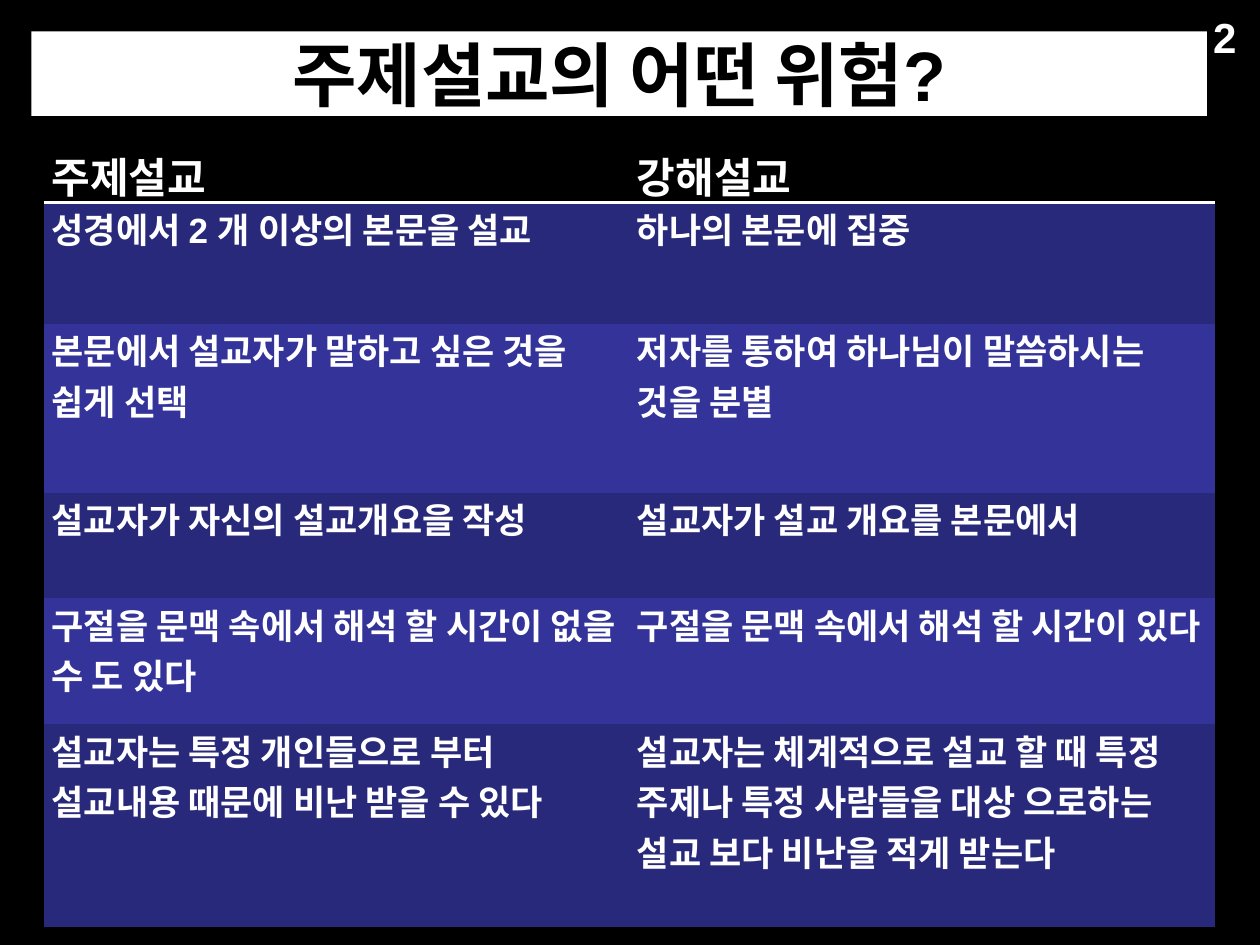
import pptx
import pptx.util
import pptx.dml.color
import pptx.enum.shapes
import pptx.enum.text
import pptx.oxml
import pptx.oxml.ns
from pptx.util import Inches

BLACK, WHITE, NAVY, INDIGO = "000000", "FFFFFF", "29297B", "333399"


def color(hex_string):
    return pptx.dml.color.RGBColor.from_string(hex_string)


def style_text(paragraph, size, hex_string, name="Arial"):
    font = paragraph.font
    font.name, font.size, font.bold = name, pptx.util.Pt(size), True
    font.color.rgb = color(hex_string)


presentation = pptx.Presentation()
presentation.slide_width = Inches(10)
presentation.slide_height = Inches(7.5)
slide = presentation.slides.add_slide(presentation.slide_layouts[6])
slide.background.fill.solid()
slide.background.fill.fore_color.rgb = color(BLACK)

# Title bar
title = slide.shapes.add_shape(
    pptx.enum.shapes.MSO_SHAPE.RECTANGLE,
    Inches(0.25), Inches(0.25), Inches(9.33), Inches(0.67))
title.shadow.inherit = False
title.fill.solid()
title.fill.fore_color.rgb = color(WHITE)
title.line.fill.background()
title.text_frame.vertical_anchor = pptx.enum.text.MSO_ANCHOR.MIDDLE
title.text_frame.text = "주제설교의 어떤 위험?"
paragraph = title.text_frame.paragraphs[0]
paragraph.alignment = pptx.enum.text.PP_ALIGN.CENTER
style_text(paragraph, 40, BLACK)

# Page number
number = slide.shapes.add_textbox(Inches(9.53), Inches(0.04), Inches(0.39), Inches(0.5))
number.text_frame.word_wrap = False
number.text_frame.text = "2"
style_text(number.text_frame.paragraphs[0], 24, WHITE)

# Comparison table: height in inches, font, topical preaching, expository preaching
rows = [
    (0.46, "Arial", "주제설교", "강해설교"),
    (0.96, "Arial", "성경에서 2 개 이상의 본문을 설교", "하나의 본문에 집중"),
    (1.34, "Arial", "본문에서 설교자가 말하고 싶은 것을 쉽게 선택",
     "저자를 통하여 하나님이 말씀하시는 것을 분별"),
    (0.84, "Arial", "설교자가 자신의 설교개요을 작성", "설교자가 설교 개요를 본문에서"),
    (1.00, "Roboto", "구절을 문맥 속에서 해석 할 시간이 없을 수 도 있다",
     "구절을 문맥 속에서 해석 할 시간이 있다"),
    (1.61, "Arial", "설교자는 특정 개인들으로 부터 설교내용 때문에 비난 받을 수 있다",
     "설교자는 체계적으로 설교 할 때 특정 주제나 특정 사람들을 대상 으로하는 설교 보다 비난을 적게 받는다"),
]
table_height = sum(row[0] for row in rows)
table = slide.shapes.add_table(
    len(rows), 2, Inches(0.35), Inches(1.15), Inches(9.29), Inches(table_height)).table

# Plain table style without grid lines
style_id = table._tbl.tblPr.find(pptx.oxml.ns.qn("a:tableStyleId"))
style_id.text = "{2D5ABB26-0587-4C30-8999-92F81FD0307C}"

header_border = (
    f'<a:lnB {pptx.oxml.ns.nsdecls("a")} w="25400"><a:solidFill>'
    f'<a:srgbClr val="{WHITE}"/></a:solidFill></a:lnB>')

for row_index, (height, font_name, *texts) in enumerate(rows):
    table.rows[row_index].height = Inches(height)
    is_header = row_index == 0
    band = BLACK if is_header else (INDIGO, NAVY)[row_index % 2]
    for column_index, text in enumerate(texts):
        cell = table.cell(row_index, column_index)
        cell.margin_left = cell.margin_right = Inches(0.06)
        cell.margin_top = cell.margin_bottom = 0
        cell.fill.solid()
        cell.fill.fore_color.rgb = color(band)
        cell.text = text
        style_text(cell.text_frame.paragraphs[0], 24 if is_header else 20, WHITE, font_name)
        if is_header:
            cell._tc.get_or_add_tcPr().insert(0, pptx.oxml.parse_xml(header_border))

presentation.save("out.pptx")
